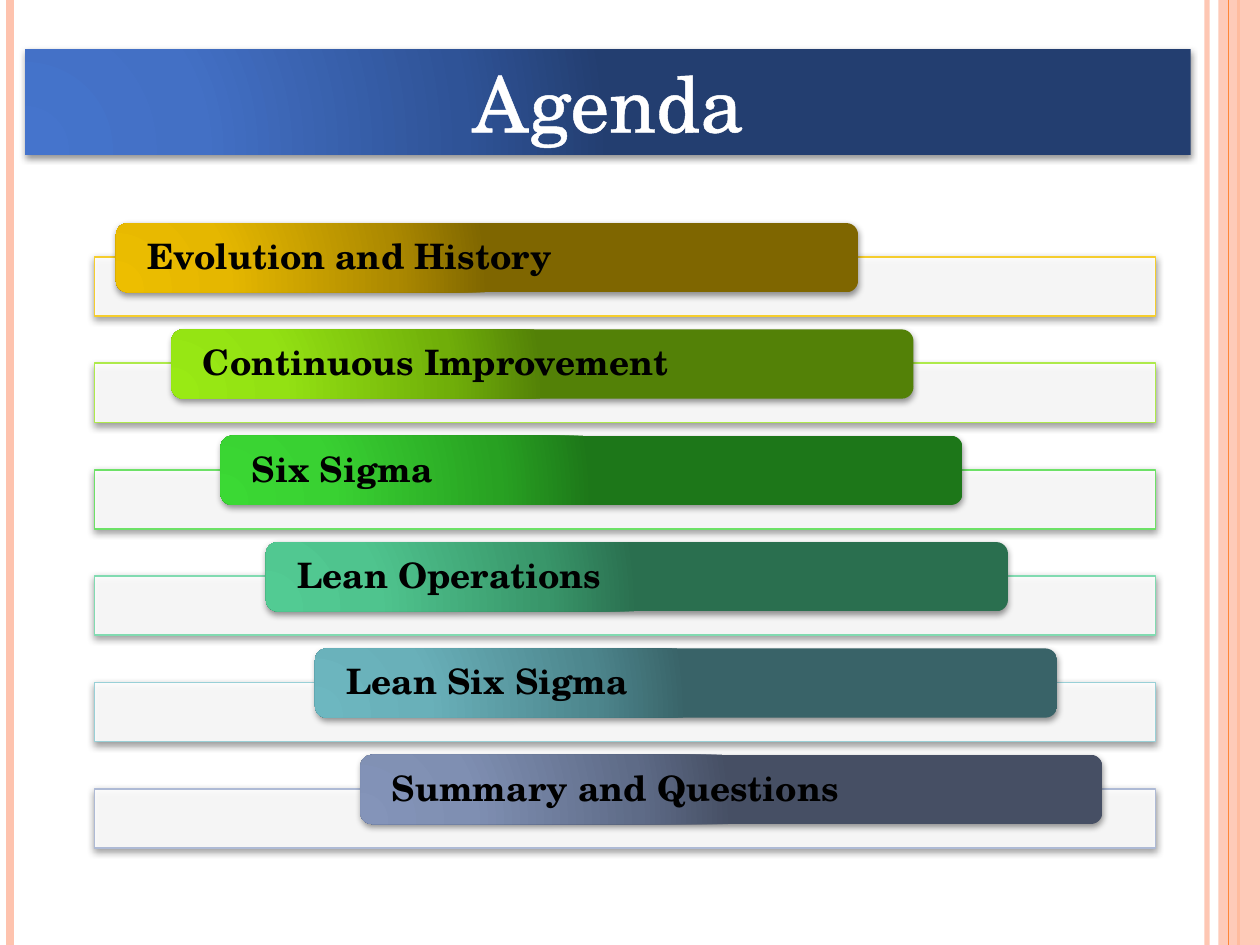
from lxml import etree
from pptx import Presentation
from pptx.dml.color import RGBColor
from pptx.enum.shapes import MSO_CONNECTOR, MSO_SHAPE
from pptx.enum.text import MSO_ANCHOR, MSO_AUTO_SIZE, PP_ALIGN
from pptx.oxml import parse_xml
from pptx.oxml.ns import nsdecls, qn
from pptx.util import Inches, Pt

RECT, ROUND = MSO_SHAPE.RECTANGLE, MSO_SHAPE.ROUNDED_RECTANGLE
STRAIGHT = MSO_CONNECTOR.STRAIGHT
TOP, MIDDLE = MSO_ANCHOR.TOP, MSO_ANCHOR.MIDDLE
LEFT, CENTER = PP_ALIGN.LEFT, PP_ALIGN.CENTER
GROW = MSO_AUTO_SIZE.SHAPE_TO_FIT_TEXT
FONT = "TeX Gyre Schola"

WHITE, BLACK = RGBColor(255, 255, 255), RGBColor(0, 0, 0)
PEACH, ORANGE = RGBColor(0xFE, 0xC3, 0xAE), RGBColor(0xFE, 0x86, 0x37)
STOPS = (0, 30, 75, 100)
BLUES = [RGBColor.from_string(c) for c in "4574CC 4370C5 2F5397 233E70".split()]

# Text, left of bar, rail outline and bar gradient
ITEMS = [
    ("Evolution and History", 0.92, "F5CD2D EDBE00 E5B700 AC8900 7F6600"),
    ("Continuous Improvement", 1.36, "AEEA4B 99EA14 93E113 70AE09 538107"),
    ("Six Sigma", 1.75, "6DE167 3BD934 39D132 28A122 1D7719"),
    ("Lean Operations", 2.11, "81DBB1 52CB93 4FC48E 39966A 2A6F4F"),
    ("Lean Six Sigma", 2.5, "99D0D7 6DB7C0 69B0B9 4D868D 396368"),
    ("Summary and Questions", 2.86, "AEBAD5 8494B9 7F8FB2 5E6B87 464F64"),
]

prs = Presentation()
prs.slide_width, prs.slide_height = Inches(10), Inches(7.5)
slide = prs.slides.add_slide(prs.slide_layouts[6])
shapes = slide.shapes


def block(kind, box, fill, edge=None, alpha=100, shade=True):
    """Add a shape; a list of colours as fill makes a radial gradient."""
    item = shapes.add_shape(kind, *map(Inches, box))
    props = item.element.spPr
    if isinstance(fill, list):
        item.fill.gradient()
        stops = "".join(
            f'<a:gs pos="{pos * 1000}"><a:srgbClr val="{tone}"/></a:gs>'
            for pos, tone in zip(STOPS, fill))
        props.replace(props.find(qn("a:gradFill")), parse_xml(
            f'<a:gradFill {nsdecls("a")} rotWithShape="1"><a:gsLst>{stops}</a:gsLst>'
            '<a:path path="circle"><a:fillToRect l="5000" t="100000" r="120000"'
            ' b="10000"/></a:path></a:gradFill>'))
    else:
        item.fill.solid()
        item.fill.fore_color.rgb = fill
        tone = props.find(qn("a:solidFill"))[0]
        etree.SubElement(tone, qn("a:alpha"), val=str(alpha * 1000))
    if edge:
        item.line.color.rgb = edge
        item.line.width = Pt(1)
    else:
        item.line.fill.background()
    item.shadow.inherit = False
    if shade:
        props.find(qn("a:effectLst")).append(parse_xml(
            f'<a:outerShdw {nsdecls("a")} blurRad="{Pt(4)}" dist="{Pt(1.6)}"'
            ' dir="5400000" rotWithShape="0"><a:srgbClr val="000000">'
            '<a:alpha val="42000"/></a:srgbClr></a:outerShdw>'))
    return item


def write(item, text, size, color, bold=False, align=LEFT, anchor=MIDDLE):
    """Put one formatted paragraph in a shape and return its run."""
    frame = item.text_frame
    frame.word_wrap = True
    frame.vertical_anchor = anchor
    para = frame.paragraphs[0]
    para.alignment = align
    run = para.add_run()
    run.text = text
    font = run.font
    font.name, font.size, font.bold = FONT, Pt(size), bold
    font.color.rgb = color
    return run


# Side stripes, with the wide band behind the last line
for x, tone, width, alpha in [(9.58, PEACH, 3, 93), (0.08, PEACH, 4.5, 100),
                              (9.83, ORANGE, 1.5, 100), (9.75, ORANGE, 0.75, 100)]:
    if x == 9.75:
        block(RECT, (9.67, 0, 0.33, 7.5), PEACH, alpha=87, shade=False)
    line = shapes.add_connector(STRAIGHT, Inches(x), 0, Inches(x), Inches(7.5))
    line.line.color.rgb = tone
    line.line.width = Pt(width)
    props = line.element.spPr
    etree.SubElement(props.find(".//" + qn("a:srgbClr")), qn("a:alpha"),
                     val=str(alpha * 1000))
    etree.SubElement(props, qn("a:effectLst"))

# Title banner with outlined letters
title = block(RECT, (0.2, 0.39, 9.25, 0.84), BLUES)
run = write(title, "Agenda", 44, WHITE, align=CENTER, anchor=TOP)
title.text_frame.auto_size = GROW
run.font.fill.solid()
run.font.fill.fore_color.rgb = WHITE
run.font._element.insert(0, parse_xml(
    f'<a:ln {nsdecls("a")} w="{Pt(1.45)}"><a:solidFill>'
    f'<a:srgbClr val="{WHITE}"/></a:solidFill></a:ln>'))

# Agenda rows: rail, bar and label
pitch = 4.22 / 5
for i, (text, left, codes) in enumerate(ITEMS):
    edge, *tones = [RGBColor.from_string(c) for c in codes.split()]
    top = 2.04 + i * pitch
    block(RECT, (0.75, top, 8.42, 0.47), WHITE, edge, alpha=90)
    bar = block(ROUND, (left, top - 0.27, 5.89, 0.55), tones)
    bar.adjustments[0] = 0.17
    label = shapes.add_textbox(Inches(left + 0.03), Inches(top - 0.24),
                               Inches(5.84), Inches(0.5))
    write(label, text, 20, BLACK, bold=True)
    frame = label.text_frame
    frame.margin_left = frame.margin_right = Inches(0.22)
    frame.margin_top = frame.margin_bottom = 0
    frame.paragraphs[0].line_spacing = 0.9
    frame.paragraphs[0].space_after = Pt(7)

prs.save("out.pptx")
